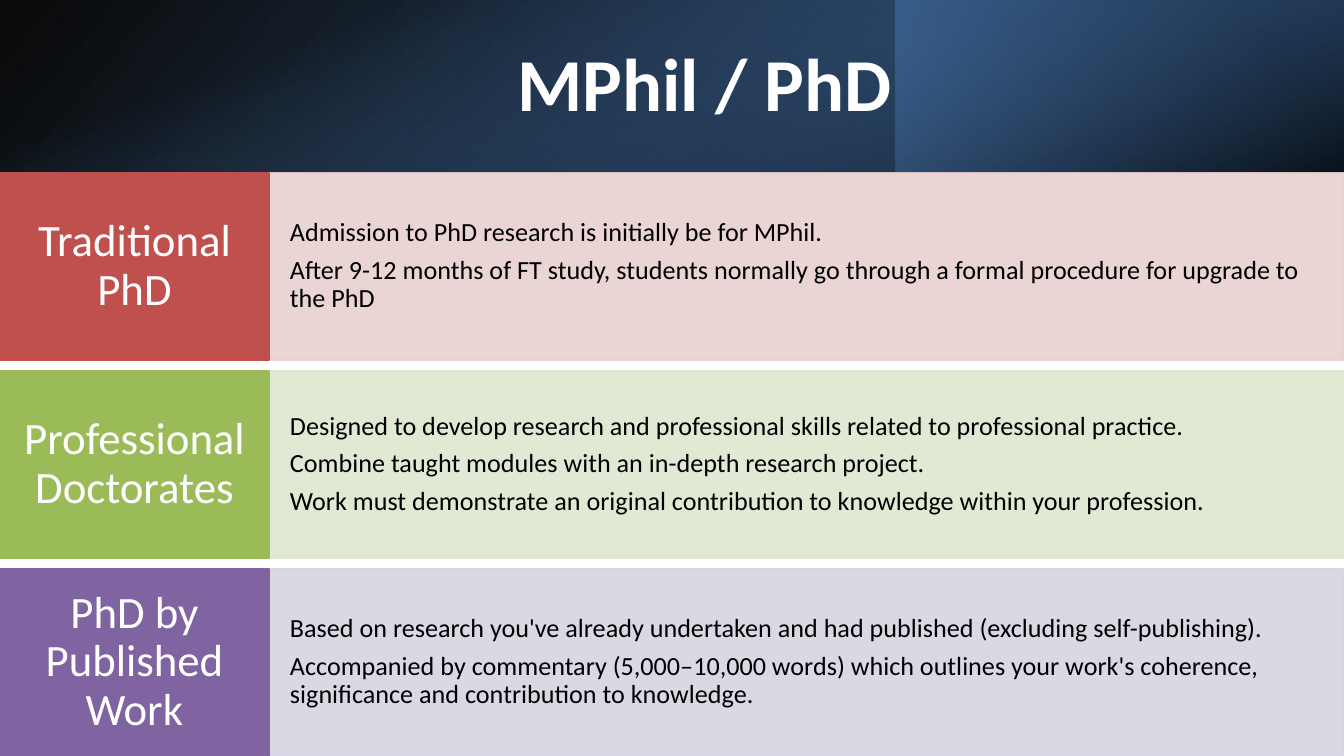
from dataclasses import dataclass

from pptx import Presentation
from pptx.dml.color import RGBColor
from pptx.enum.shapes import MSO_SHAPE
from pptx.enum.text import MSO_ANCHOR, MSO_AUTO_SIZE, PP_ALIGN
from pptx.oxml import parse_xml
from pptx.oxml.ns import nsdecls, qn
from pptx.oxml.xmlchemy import OxmlElement
from pptx.util import Emu, Pt

RECTANGLE = MSO_SHAPE.RECTANGLE
MIDDLE = MSO_ANCHOR.MIDDLE
LEFT, CENTER = PP_ALIGN.LEFT, PP_ALIGN.CENTER
NO_AUTOFIT = MSO_AUTO_SIZE.NONE

SCALE = 914400 / 134.4
SLIDE_WIDTH, SLIDE_HEIGHT = 1344, 756
BANNER_HEIGHT = 173
LABEL_WIDTH = 269
ROW_GAP = 11


@dataclass(frozen=True)
class Theme:
    font: str = "Calibri"
    title_size: int = 40
    label_size: int = 24
    body_size: int = 14
    paragraph_gap: int = 5
    line_spacing: float = 0.9
    panel_alpha: int = 90
    light: str = "FFFFFF"
    dark: str = "000000"
    navy: str = "254061"
    deep_blue: str = "376092"
    blue: str = "4F81BD"


THEME = Theme()

# label, label colour, panel colour, paragraphs
ROUTES = [
    ("Traditional PhD", "C0504D", "E8D0D0", [
        "Admission to PhD research is initially be for MPhil.",
        "After 9-12 months of FT study, students normally go through a formal "
        "procedure for upgrade to the PhD",
    ]),
    ("Professional Doctorates", "9BBB59", "DEE7D1", [
        "Designed to develop research and professional skills related to "
        "professional practice.",
        "Combine taught modules with an in-depth research project.",
        "Work must demonstrate an original contribution to knowledge within "
        "your profession.",
    ]),
    ("PhD by Published Work", "8064A2", "D8D3E0", [
        "Based on research you've already undertaken and had published "
        "(excluding self-publishing).",
        "Accompanied by commentary (5,000–10,000 words) which outlines your "
        "work's coherence, significance and contribution to knowledge.",
    ]),
]


def px(value):
    return Emu(round(value * SCALE))


class SlideBuilder:
    def __init__(self, slide, theme):
        self.slide = slide
        self.theme = theme

    def rectangle(self, left, top, width, height):
        shape = self.slide.shapes.add_shape(
            RECTANGLE, px(left), px(top), px(width), px(height))
        shape.shadow.inherit = False
        return shape

    def gradient(self, box, stops, angle, rotation=0, flipped=False):
        """Add a borderless rectangle; stops are (position, colour, alpha) in percent."""
        shape = self.rectangle(*box)
        shape.rotation = rotation
        shape.line.fill.background()
        shape.fill.background()
        properties = shape.element.spPr
        if flipped:
            properties.find(qn("a:xfrm")).set("flipH", "1")
        stop_xml = "".join(
            f'<a:gs pos="{position * 1000}"><a:srgbClr val="{color}">'
            f'<a:alpha val="{alpha * 1000}"/></a:srgbClr></a:gs>'
            for position, color, alpha in stops)
        properties.replace(properties.find(qn("a:noFill")), parse_xml(
            f'<a:gradFill {nsdecls("a")} rotWithShape="1"><a:gsLst>{stop_xml}</a:gsLst>'
            f'<a:lin ang="{angle * 60000}" scaled="0"/></a:gradFill>'))

    def text(self, frame, paragraphs, size, color, align, bold=False):
        frame.word_wrap = True
        frame.auto_size = NO_AUTOFIT
        frame.vertical_anchor = MIDDLE
        for index, content in enumerate(paragraphs):
            paragraph = frame.add_paragraph() if index else frame.paragraphs[0]
            paragraph.alignment = align
            paragraph.line_spacing = self.theme.line_spacing
            paragraph.space_before = Pt(self.theme.paragraph_gap if index else 0)
            run = paragraph.add_run()
            run.text = content
            run.font.name = self.theme.font
            run.font.size = Pt(size)
            run.font.bold = bold
            run.font.color.rgb = RGBColor.from_string(color)

    def title(self, content, left, top, width, height):
        """Fill the title placeholder and bring it in front of the banner."""
        title = self.slide.shapes.title
        title.left, title.top = px(left), px(top)
        title.width, title.height = px(width), px(height)
        self.text(title.text_frame, [content], self.theme.title_size,
                  self.theme.light, CENTER, bold=True)
        title.element.getparent().append(title.element)

    def block(self, box, fill, paragraphs, size, color, align, insets, alpha=100):
        shape = self.rectangle(*box)
        shape.line.width = Pt(1)
        for paint in (shape.fill, shape.line.fill):
            paint.solid()
            paint.fore_color.rgb = RGBColor.from_string(fill)
        if alpha < 100:
            for color_element in shape.element.spPr.iter(qn("a:srgbClr")):
                opacity = OxmlElement("a:alpha")
                opacity.set("val", str(alpha * 1000))
                color_element.append(opacity)
        frame = shape.text_frame
        frame.margin_left = frame.margin_right = px(insets[0])
        frame.margin_top = frame.margin_bottom = px(insets[1])
        self.text(frame, paragraphs, size, color, align)

    def banner(self):
        theme = self.theme
        self.gradient((0, 0, SLIDE_WIDTH, BANNER_HEIGHT),
                      [(0, theme.dark, 96), (100, theme.deep_blue, 100)],
                      angle=140, flipped=True)
        third = SLIDE_WIDTH // 3
        self.gradient((SLIDE_WIDTH - third, 0, third, BANNER_HEIGHT),
                      [(19, theme.navy, 68), (100, theme.blue, 79)],
                      angle=320, rotation=180)
        # A quarter turn about the banner's centre swaps width and height.
        offset = (SLIDE_WIDTH - BANNER_HEIGHT) / 2
        self.gradient((offset, -offset, BANNER_HEIGHT, SLIDE_WIDTH),
                      [(23, theme.blue, 0), (99, theme.dark, 74)],
                      angle=340, rotation=90)

    def route(self, top, height, label, label_color, panel_color, paragraphs):
        theme = self.theme
        self.block((LABEL_WIDTH, top, SLIDE_WIDTH - LABEL_WIDTH, height), panel_color,
                   paragraphs, theme.body_size, theme.dark, LEFT, (21, 47),
                   theme.panel_alpha)
        self.block((0, top, LABEL_WIDTH, height), label_color, [label],
                   theme.label_size, theme.light, CENTER, (15, 19))


def main():
    presentation = Presentation()
    presentation.slide_width = px(SLIDE_WIDTH)
    presentation.slide_height = px(SLIDE_HEIGHT)
    title_only = presentation.slide_layouts[5]
    builder = SlideBuilder(presentation.slides.add_slide(title_only), THEME)

    builder.banner()
    builder.title("MPhil / PhD", 151, 39, 1107, 97)

    count = len(ROUTES)
    height = (SLIDE_HEIGHT - BANNER_HEIGHT - ROW_GAP * (count - 1)) // count
    for index, route in enumerate(ROUTES):
        builder.route(BANNER_HEIGHT + index * (height + ROW_GAP), height, *route)

    presentation.save("out.pptx")


if __name__ == "__main__":
    main()
